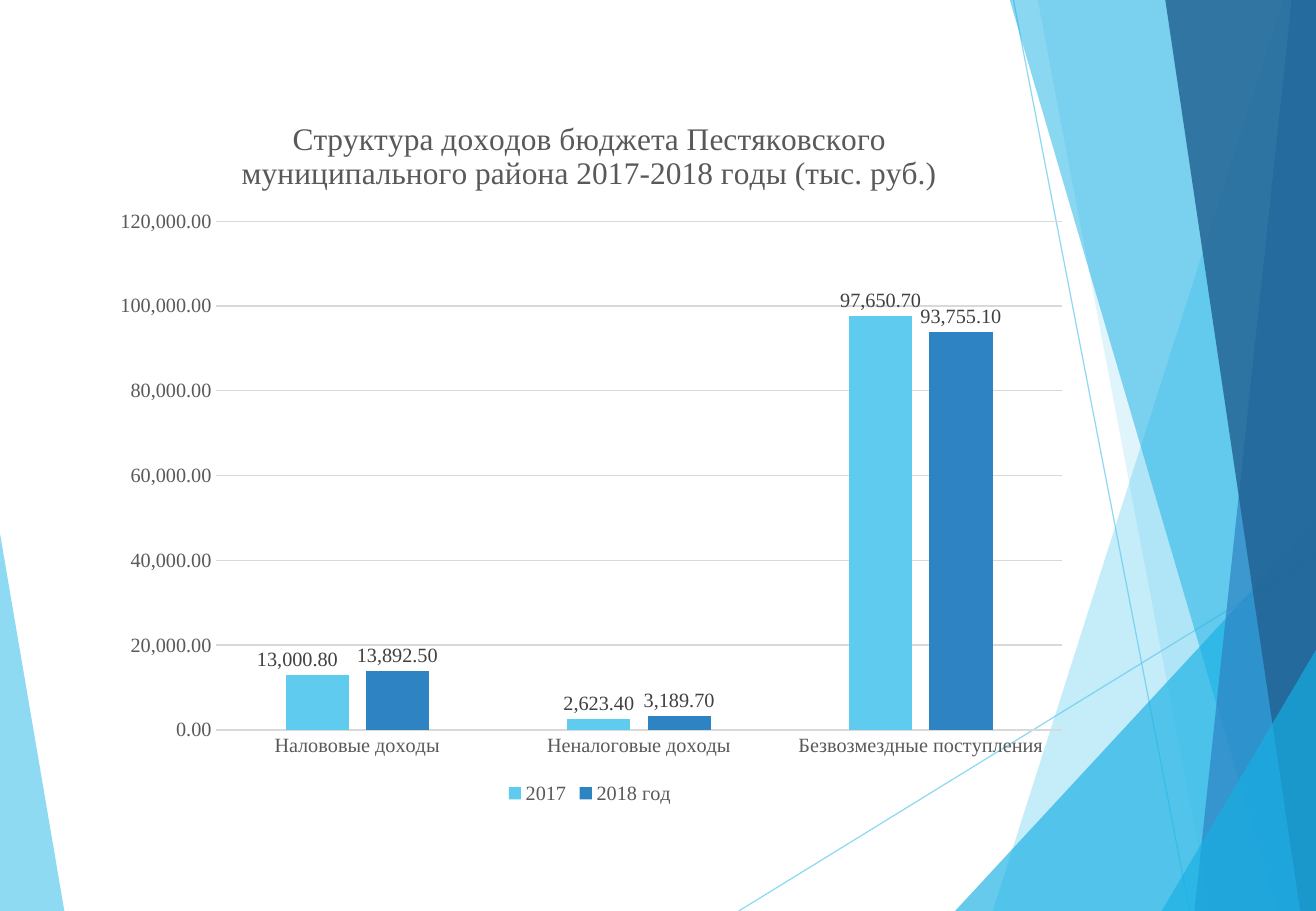
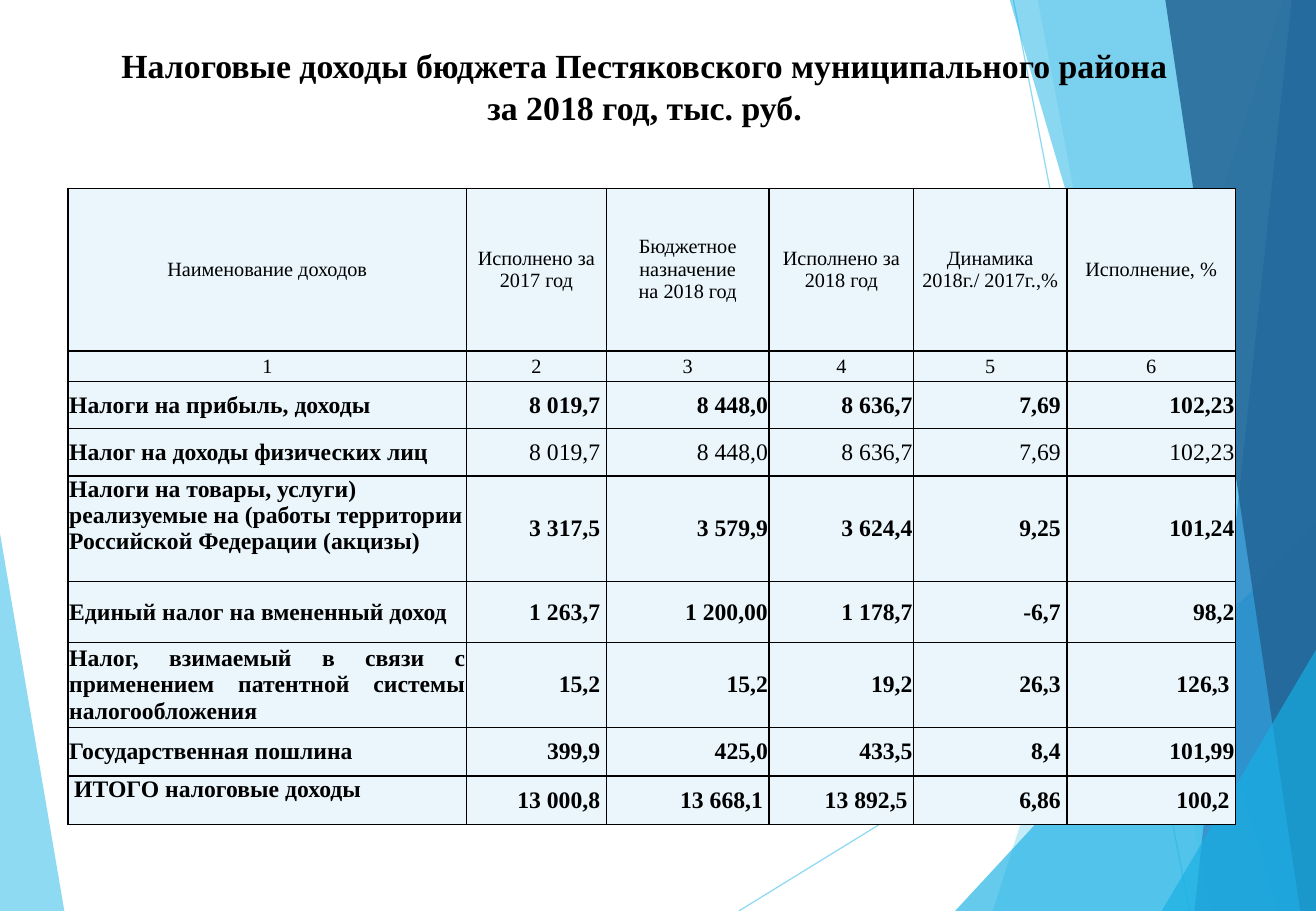
from lxml import etree
from pptx import Presentation
from pptx.chart.data import CategoryChartData
from pptx.dml.color import RGBColor
from pptx.enum.chart import XL_CHART_TYPE, XL_LABEL_POSITION, XL_LEGEND_POSITION, XL_TICK_MARK
from pptx.enum.shapes import MSO_CONNECTOR
from pptx.enum.text import MSO_ANCHOR, PP_ALIGN
from pptx.oxml import parse_xml
from pptx.oxml.ns import nsdecls, qn
from pptx.util import Inches, Pt

LEFT, CENTER, RIGHT, JUSTIFY = PP_ALIGN.LEFT, PP_ALIGN.CENTER, PP_ALIGN.RIGHT, PP_ALIGN.JUSTIFY
TOP, MIDDLE = MSO_ANCHOR.TOP, MSO_ANCHOR.MIDDLE
NO_TICK = XL_TICK_MARK.NONE
OUTSIDE_END = XL_LABEL_POSITION.OUTSIDE_END

FONT = "Times New Roman"
BLACK = RGBColor(0, 0, 0)
SKY = RGBColor(0x5F, 0xCB, 0xEF)
AZURE = RGBColor(0x17, 0xB0, 0xE4)
BLUE = RGBColor(0x2E, 0x83, 0xC3)
NAVY = RGBColor(0x22, 0x62, 0x92)
PALE = RGBColor(0xEA, 0xF6, 0xFC)
GRID_GRAY = RGBColor(0xD9, 0xD9, 0xD9)
AXIS_GRAY = RGBColor(0x59, 0x59, 0x59)
LABEL_GRAY = RGBColor(0x40, 0x40, 0x40)

WIDTH, HEIGHT = 10.83, 7.5
NUMBER_FORMAT = "#,##0.00"

RAYS = [((6.08, HEIGHT), (10.84, 4.57)), ((8.34, 0), (9.79, HEIGHT))]
LEFT_FACET = (SKY, 70, [(0, 4.39), (0.53, HEIGHT), (0, HEIGHT)])
RIGHT_FACETS = [  # colour, opacity, top left, bottom left
    (SKY, 36, (10.56, 0), (8.17, HEIGHT)),
    (SKY, 20, (8.54, 0), (9.96, HEIGHT)),
    (AZURE, 66, (WIDTH, 4.29), (7.86, HEIGHT)),
    (AZURE, 50, (8.31, 0), (10.51, HEIGHT)),
    (BLUE, 70, (10.63, 0), (9.83, HEIGHT)),
    (NAVY, 82, (9.59, 0), (10.7, HEIGHT)),
    (AZURE, 66, (WIDTH, 5.35), (9.56, HEIGHT)),
]

CHART_TITLE = "Структура доходов бюджета Пестяковского муниципального района 2017-2018 годы (тыс. руб.)"
CATEGORIES = ["Налововые доходы", "Неналоговые доходы", "Безвозмездные поступления"]
SERIES = [
    ("2017", SKY, (13000.8, 2623.4, 97650.7)),
    ("2018 год", BLUE, (13892.5, 3189.7, 93755.1)),
]

TABLE_TITLE = "Налоговые доходы бюджета Пестяковского муниципального района за 2018 год, тыс. руб."
COLUMN_WIDTHS = [3.28, 1.15, 1.34, 1.19, 1.26, 1.39]
ROW_HEIGHTS = [1.34, 0.25, 0.39, 0.39, 0.87, 0.5, 0.65, 0.4, 0.4]
HEADERS = [
    ["Наименование доходов", "Исполнено за 2017 год", "Бюджетное назначение\nна 2018 год",
     "Исполнено за 2018 год", "Динамика\n2018г./ 2017г.,%", "Исполнение, %"],
    ["1", "2", "3", "4", "5", "6"],
]
PERSONAL_TAX = "Нaлог нa доходы физических лиц"
GOODS_TAX = "Налоги нa товары, услуги) реализуемые нa (работы территории Российской Федерации (акцизы)"
PATENT_TAX = "Налог, взимаемый в связи с применением патентной системы налогообложения"
TOTAL = "ИТОГО налоговые доходы"
TAXES = [
    ["Нaлоги нa прибыль, доходы", "8 019,7", "8 448,0", "8 636,7", "7,69", "102,23"],
    [PERSONAL_TAX, "8 019,7", "8 448,0", "8 636,7", "7,69", "102,23"],
    [GOODS_TAX, "3 317,5", "3 579,9", "3 624,4", "9,25", "101,24"],
    ["Единый налог на вмененный доход", "1 263,7", "1 200,00", "1 178,7", "-6,7", "98,2"],
    [PATENT_TAX, "15,2", "15,2", "19,2", "26,3", "126,3"],
    ["Государственная пошлина", "399,9", "425,0", "433,5", "8,4", "101,99"],
    [TOTAL, "13 000,8", "13 668,1", "13 892,5", "6,86", "100,2"],
]


def style_font(font, size, color, bold=False):
    font.name, font.size, font.bold = FONT, Pt(size), bold
    font.color.rgb = color


def write_text(frame, text, size=12, color=BLACK, bold=False, align=LEFT, spacing=None):
    frame.word_wrap = True
    for index, line in enumerate(text.split("\n")):
        paragraph = frame.paragraphs[0] if index == 0 else frame.add_paragraph()
        paragraph.alignment = align
        if spacing:
            paragraph.line_spacing = spacing
        run = paragraph.add_run()
        run.text = line
        style_font(run.font, size, color, bold)


def set_opacity(element, percent):
    for color in element.iter(qn("a:srgbClr")):
        etree.SubElement(color, qn("a:alpha")).set("val", str(percent * 1000))


def add_facet(slide, color, opacity, points):
    corners = [(Inches(x), Inches(y)) for x, y in points]
    builder = slide.shapes.build_freeform(*corners[0], scale=1.0)
    builder.add_line_segments(corners[1:], close=True)
    shape = builder.convert_to_shape()
    shape.shadow.inherit = False
    shape.line.fill.background()
    shape.fill.solid()
    shape.fill.fore_color.rgb = color
    set_opacity(shape.fill._xPr, opacity)


def add_ray(slide, start, end):
    ray = slide.shapes.add_connector(
        MSO_CONNECTOR.STRAIGHT, *(Inches(value) for value in (*start, *end)))
    ray.line.color.rgb = SKY
    ray.line.width = Pt(0.75)
    properties = ray._element.spPr
    set_opacity(properties, 70)
    etree.SubElement(properties, qn("a:effectLst"))


def add_backdrop(slide):
    add_facet(slide, *LEFT_FACET)
    for start, end in RAYS:
        add_ray(slide, start, end)
    for color, opacity, top, bottom in RIGHT_FACETS:
        points = [top, bottom, (WIDTH, HEIGHT)]
        if top[0] < WIDTH:
            points.append((WIDTH, 0))
        add_facet(slide, color, opacity, points)


def manual_layout(**values):
    """Return a chart layout element with the given settings, in schema order."""
    settings = "".join(f'<c:{name} val="{value}"/>' for name, value in values.items())
    return parse_xml(
        f'<c:layout {nsdecls("c")}><c:manualLayout>{settings}</c:manualLayout></c:layout>')


def style_axes(chart):
    for axis in (chart.category_axis, chart.value_axis):
        axis.major_tick_mark = axis.minor_tick_mark = NO_TICK
        style_font(axis.tick_labels.font, 12, AXIS_GRAY)
    values = chart.value_axis
    values.minimum_scale, values.maximum_scale, values.major_unit = 0, 120000, 20000
    values.tick_labels.number_format = NUMBER_FORMAT
    values.tick_labels.number_format_is_linked = False
    values.format.line.fill.background()
    for line in (chart.category_axis.format.line, values.major_gridlines.format.line):
        line.color.rgb = GRID_GRAY
        line.width = Pt(0.75)


def style_series(plot):
    plot.gap_width, plot.overlap, plot.vary_by_categories = 219, -27, False
    for series, (_, color, _) in zip(plot.series, SERIES):
        series.format.fill.solid()
        series.format.fill.fore_color.rgb = color
        labels = series.data_labels
        labels.show_value = True
        labels.number_format = NUMBER_FORMAT
        labels.number_format_is_linked = False
        labels.position = OUTSIDE_END
        style_font(labels.font, 12, LABEL_GRAY)


def add_income_chart(slide, left, top, width, height):
    data = CategoryChartData(number_format=NUMBER_FORMAT)
    data.categories = CATEGORIES
    for name, _, values in SERIES:
        data.add_series(name, values)
    chart = slide.shapes.add_chart(
        XL_CHART_TYPE.COLUMN_CLUSTERED, Inches(left), Inches(top),
        Inches(width), Inches(height), data).chart
    style_font(chart.font, 10, BLACK)
    write_text(chart.chart_title.text_frame, CHART_TITLE, size=18.6, color=AXIS_GRAY, align=CENTER)
    chart.chart_title.include_in_layout = False
    chart.has_legend = True
    chart.legend.position = XL_LEGEND_POSITION.BOTTOM
    chart.legend.include_in_layout = False
    style_font(chart.legend.font, 12, AXIS_GRAY)
    style_axes(chart)
    style_series(chart.plots[0])

    first_label = chart.plots[0].series[0].points[0].data_label
    first_label.position = OUTSIDE_END
    style_font(first_label.font, 12, LABEL_GRAY)
    space = chart._chartSpace
    space.xpath(".//c:dLbl/c:idx")[0].addnext(manual_layout(x=-0.02, y=0))

    plot_area = space.xpath(".//c:plotArea")[0]
    for old_layout in plot_area.findall(qn("c:layout")):
        plot_area.remove(old_layout)
    plot_area.insert(0, manual_layout(
        layoutTarget="inner", xMode="edge", yMode="edge", x=0.12, y=0.18, w=0.86, h=0.71))
    space.find(qn("c:txPr")).addprevious(parse_xml(
        f'<c:spPr {nsdecls("c", "a")}><a:noFill/><a:ln><a:noFill/></a:ln></c:spPr>'))


def add_title(slide, text, left, top, width, height):
    box = slide.shapes.add_textbox(Inches(left), Inches(top), Inches(width), Inches(height))
    write_text(box.text_frame, text, size=20, bold=True, align=CENTER, spacing=1.05)


def format_cell(cell, inset, anchor):
    cell.margin_left = cell.margin_right = Inches(inset)
    cell.margin_top = cell.margin_bottom = 0
    cell.vertical_anchor = anchor
    properties = cell._tc.get_or_add_tcPr()
    for side in ("lnL", "lnR", "lnT", "lnB"):
        properties.append(parse_xml(
            f'<a:{side} {nsdecls("a")} w="12700"><a:solidFill>'
            f'<a:srgbClr val="{BLACK}"/></a:solidFill></a:{side}>'))
    cell.fill.solid()
    cell.fill.fore_color.rgb = PALE


def fill_tax_row(cells, values):
    name = values[0]
    for column, (cell, text) in enumerate(zip(cells, values)):
        roomy = column in (1, 4) or name == TOTAL or (name == PATENT_TAX and column == 5)
        at_top = column == 0 and name in (GOODS_TAX, TOTAL)
        format_cell(cell, 0.05 if roomy else 0.01, TOP if at_top else MIDDLE)
        align = RIGHT if column else LEFT if at_top else JUSTIFY
        write_text(cell.text_frame, text, size=14, align=align,
                   bold=column == 0 or name != PERSONAL_TAX)


def add_tax_table(slide, left, top):
    table = slide.shapes.add_table(
        len(ROW_HEIGHTS), len(COLUMN_WIDTHS), Inches(left), Inches(top),
        Inches(sum(COLUMN_WIDTHS)), Inches(sum(ROW_HEIGHTS))).table
    table.first_row = table.horz_banding = False
    for column, width in zip(table.columns, COLUMN_WIDTHS):
        column.width = Inches(width)
    for row, height in zip(table.rows, ROW_HEIGHTS):
        row.height = Inches(height)
    rows = list(table.rows)
    for row, headers in zip(rows, HEADERS):
        for cell, text in zip(row.cells, headers):
            format_cell(cell, 0.05, MIDDLE)
            write_text(cell.text_frame, text, align=CENTER)
    for row, values in zip(rows[len(HEADERS):], TAXES):
        fill_tax_row(row.cells, values)


def add_slide(presentation):
    slide = presentation.slides.add_slide(presentation.slide_layouts[6])
    add_backdrop(slide)
    return slide


def main():
    presentation = Presentation()
    presentation.slide_width = Inches(WIDTH)
    presentation.slide_height = Inches(HEIGHT)
    add_income_chart(add_slide(presentation), 0.81, 0.76, 8.09, 5.9)
    tax_slide = add_slide(presentation)
    add_title(tax_slide, TABLE_TITLE, 0.85, 0.3, 8.91, 0.86)
    add_tax_table(tax_slide, 0.56, 1.55)
    presentation.save("out.pptx")


if __name__ == "__main__":
    main()
